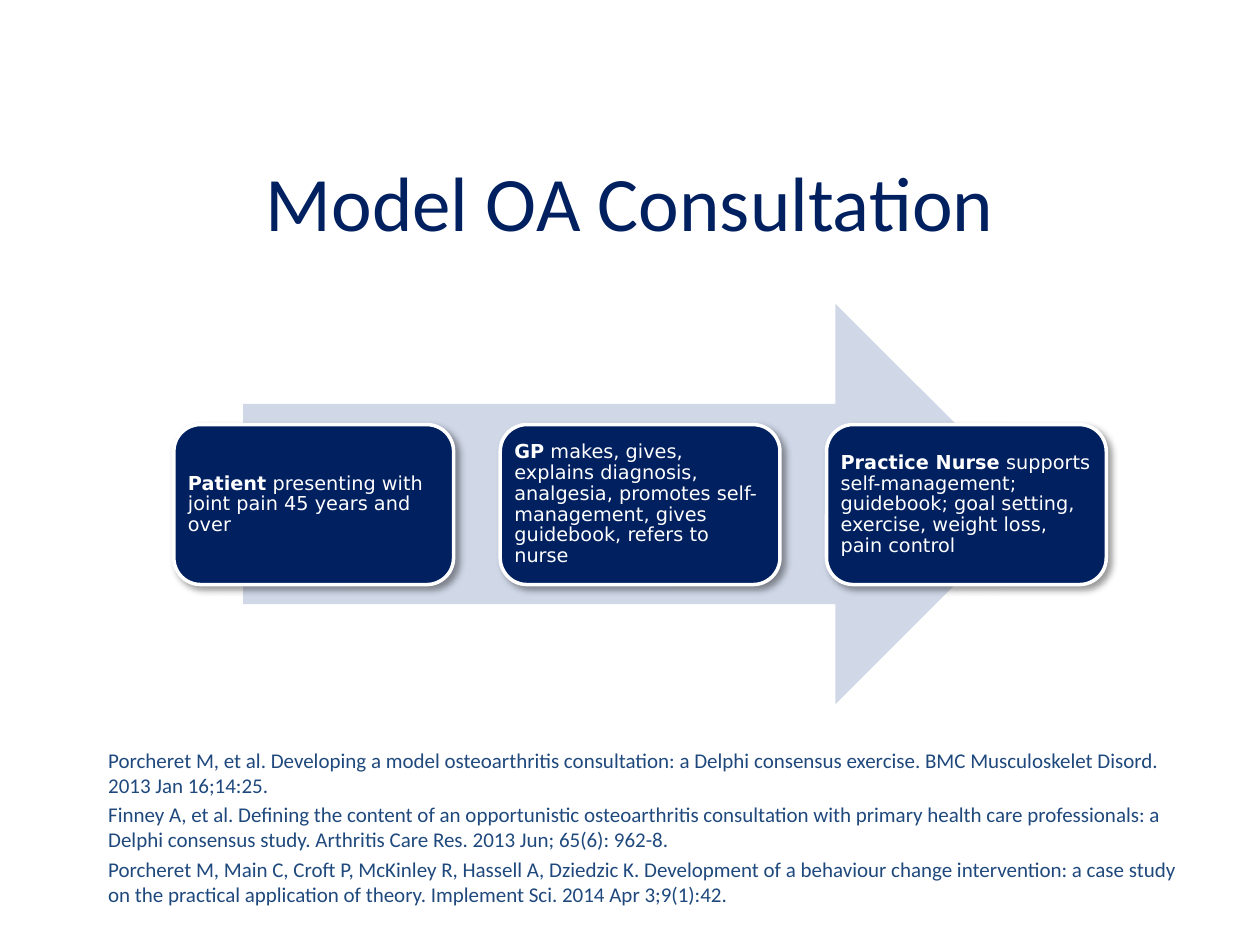
from lxml.etree import SubElement
from pptx import Presentation
from pptx.dml.color import RGBColor
from pptx.enum.shapes import MSO_SHAPE
from pptx.enum.text import MSO_ANCHOR, PP_ALIGN
from pptx.oxml.ns import qn
from pptx.util import Inches, Pt

COLOURS = {"navy": "002060", "blue": "1F497D", "pale": "D0D8E8",
           "white": "FFFFFF", "black": "000000"}
WIDTH, HEIGHT = 10, 7.5

STEPS = [
    ("Patient", " presenting with joint pain 45 years and over"),
    ("GP", " makes, gives, explains diagnosis, analgesia, promotes "
           "self-management, gives guidebook, refers to nurse"),
    ("Practice Nurse", " supports self-management; guidebook; goal setting, "
                       "exercise, weight loss, pain control"),
]
REFERENCES = [
    "Porcheret M, et al. Developing a model osteoarthritis consultation: a Delphi "
    "consensus exercise. BMC Musculoskelet Disord. 2013 Jan 16;14:25.",
    "Finney A, et al. Defining the content of an opportunistic osteoarthritis "
    "consultation with primary health care professionals: a Delphi consensus study. "
    "Arthritis Care Res. 2013 Jun; 65(6): 962-8.",
    "Porcheret M, Main C, Croft P, McKinley R, Hassell A, Dziedzic K. Development of "
    "a behaviour change intervention: a case study on the practical application of "
    "theory. Implement Sci. 2014 Apr 3;9(1):42.",
]


def colour(name):
    return RGBColor.from_string(COLOURS[name])


class SlideBuilder:
    """Places elements on a slide; left, top, width and height are percent of its size."""

    def __init__(self, page):
        self.page = page

    def area(self, left, top, width, height):
        return [Inches(share * side / 100) for share, side in
                zip((left, top, width, height), (WIDTH, HEIGHT) * 2)]

    def set_font(self, para, name, size, ink):
        para.font.name, para.font.size = name, Pt(size)
        para.font.color.rgb = colour(ink)

    def shape(self, kind, place, fill):
        shape = self.page.shapes.add_shape(kind, *self.area(*place))
        shape.shadow.inherit = False
        shape.fill.solid()
        shape.fill.fore_color.rgb = colour(fill)
        shape.line.fill.background()
        return shape

    def drop_shadow(self, shape):
        effects = shape._element.spPr.find(qn("a:effectLst"))
        shadow = SubElement(effects, qn("a:outerShdw"), blurRad=str(Pt(4)),
                            dist=str(Pt(3)), dir=str(45 * 60000), rotWithShape="0")
        ink = SubElement(shadow, qn("a:srgbClr"), val=COLOURS["black"])
        SubElement(ink, qn("a:alpha"), val="40000")

    def step(self, place, lead, detail):
        card = self.shape(MSO_SHAPE.ROUNDED_RECTANGLE, place, "navy")
        card.line.color.rgb = colour("white")
        card.line.width = Pt(2)
        self.drop_shadow(card)
        frame = card.text_frame
        frame.word_wrap = True
        frame.vertical_anchor = MSO_ANCHOR.MIDDLE
        frame.margin_left = frame.margin_right = Inches(0.05)
        frame.margin_top = frame.margin_bottom = Inches(0.05)
        para = frame.paragraphs[0]
        para.alignment = PP_ALIGN.LEFT
        para.line_spacing = 0.9
        for text, bold in ((lead, True), (detail, False)):
            span = para.add_run()
            span.text, span.font.bold = text, bold
        self.set_font(para, "DejaVu Sans", 11, "white")

    def text(self, place, lines, size, ink, align=PP_ALIGN.LEFT,
             anchor=MSO_ANCHOR.TOP, gap=0):
        frame = self.page.shapes.add_textbox(*self.area(*place)).text_frame
        frame.word_wrap = True
        frame.vertical_anchor = anchor
        for index, line in enumerate(lines):
            para = frame.add_paragraph() if index else frame.paragraphs[0]
            para.text, para.alignment = line, align
            if index:
                para.space_before = Pt(gap)
            self.set_font(para, "Calibri", size, ink)


def main():
    deck = Presentation()
    deck.slide_width, deck.slide_height = Inches(WIDTH), Inches(HEIGHT)
    builder = SlideBuilder(deck.slides.add_slide(deck.slide_layouts[6]))

    builder.shape(MSO_SHAPE.RIGHT_ARROW, (19.3, 32.13, 62.9, 42.4), "pale")
    for column, (lead, detail) in enumerate(STEPS):
        builder.step((13.8 + 25.9 * column, 44.93, 22.2, 16.93), lead, detail)
    builder.text((5, 12.93, 90, 16.67), ["Model OA Consultation"], 44, "navy",
                 PP_ALIGN.CENTER, MSO_ANCHOR.MIDDLE)
    builder.text((7.6, 78.4, 87.5, 7.33), REFERENCES, 12, "blue", gap=2.4)

    deck.save("out.pptx")


if __name__ == "__main__":
    main()
